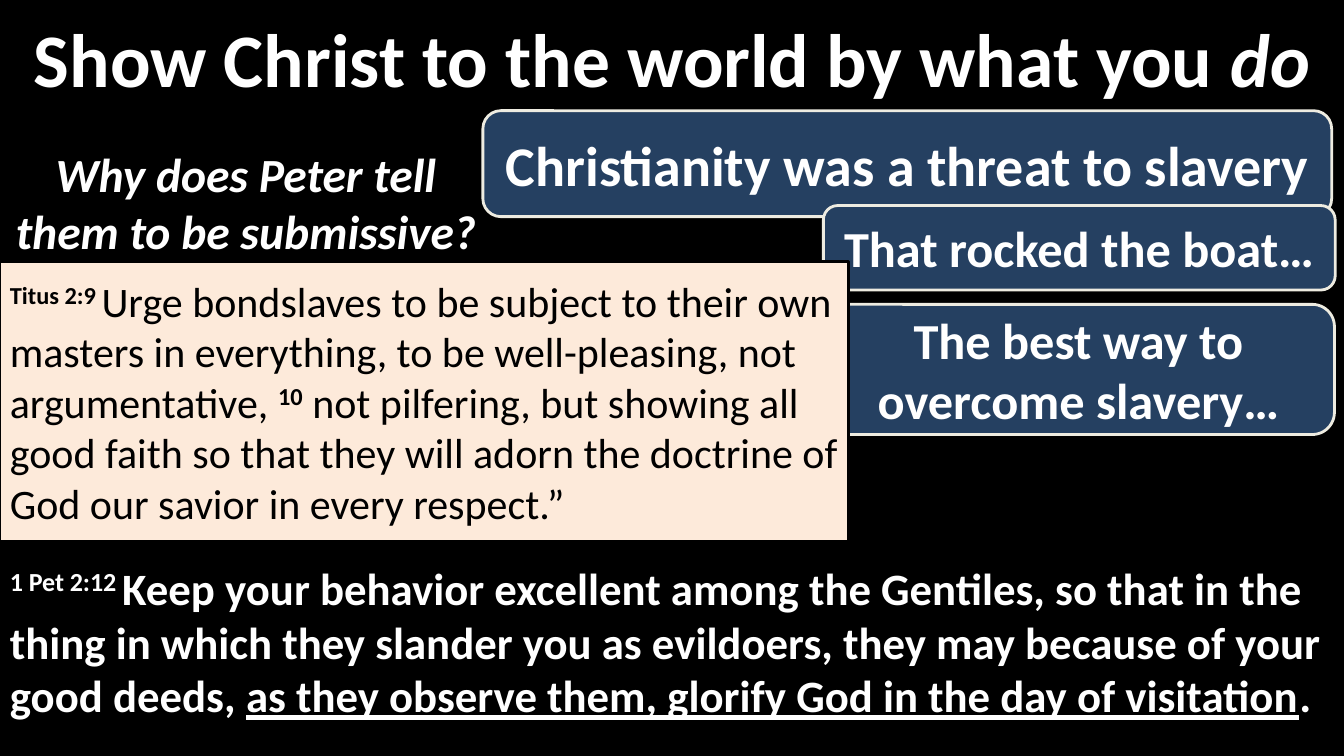
from dataclasses import dataclass

from pptx import Presentation
from pptx.dml.color import RGBColor
from pptx.enum.shapes import MSO_SHAPE
from pptx.enum.text import MSO_ANCHOR, PP_ALIGN
from pptx.util import Cm, Pt

RECT = MSO_SHAPE.RECTANGLE
CALLOUT = MSO_SHAPE.ROUNDED_RECTANGULAR_CALLOUT
TOP, MIDDLE = MSO_ANCHOR.TOP, MSO_ANCHOR.MIDDLE
LEFT, CENTER = PP_ALIGN.LEFT, PP_ALIGN.CENTER
TAIL = (-0.22, 0.5, 0.17)
WIDTH, HEIGHT = 33.87, 19.05


@dataclass(frozen=True)
class Theme:
    font: str = "Calibri"
    black: str = "000000"
    white: str = "FFFFFF"
    navy: str = "254061"
    cream: str = "EEECE1"
    peach: str = "FDEADA"
    title: int = 54
    large: int = 40
    medium: int = 36
    ask: int = 34
    verse: int = 32
    quote: int = 30
    line: int = 2


class Deck:
    def __init__(self, theme):
        self.theme = theme
        self.show = Presentation()
        self.show.slide_width = Cm(WIDTH)
        self.show.slide_height = Cm(HEIGHT)
        self.slide = self.show.slides.add_slide(self.show.slide_layouts[6])
        self.paint(self.slide.background.fill, theme.black)

    def paint(self, fill, color):
        if color:
            fill.solid()
            fill.fore_color.rgb = RGBColor.from_string(color)
        else:
            fill.background()

    def label(self, shape, parts, size, color, anchor, align):
        frame = shape.text_frame
        frame.word_wrap = True
        frame.vertical_anchor = anchor
        para = frame.paragraphs[0]
        para.alignment = align
        for text, marks in parts:
            run = para.add_run()
            run.text = text
            font = run.font
            font.name = self.theme.font
            font.size = Pt(size)
            font.color.rgb = RGBColor.from_string(color)
            font.bold = "b" in marks
            font.italic = "i" in marks
            font.underline = "u" in marks
            if "^" in marks:
                run._r.get_or_add_rPr().set("baseline", "30000")

    def title(self, box, parts):
        shape = self.slide.shapes.add_textbox(*map(Cm, box))
        self.label(shape, parts, self.theme.title, self.theme.white, MIDDLE, CENTER)

    def shape(self, kind, box, fill, line):
        shape = self.slide.shapes.add_shape(kind, *map(Cm, box))
        shape.shadow.inherit = False
        self.paint(shape.fill, fill)
        self.paint(shape.line.fill, line)
        if line:
            shape.line.width = Pt(self.theme.line)
        return shape

    def callout(self, box, text, size, marks="b", fill=None, line=None):
        shape = self.shape(CALLOUT, box, fill, line)
        for index, value in enumerate(TAIL):
            shape.adjustments[index] = value
        self.label(shape, [(text, marks)], size, self.theme.white, MIDDLE, CENTER)

    def point(self, box, text, size):
        self.callout(box, text, size, fill=self.theme.navy, line=self.theme.cream)

    def verse(self, box, parts, size, color, fill, line=None, anchor=TOP):
        shape = self.shape(RECT, box, fill, line)
        self.label(shape, parts, size, color, anchor, LEFT)


def main():
    theme = Theme()
    deck = Deck(theme)
    deck.title((0, 0.1, WIDTH, 2.67), [
        ("Show Christ to the world by what you ", "b"),
        ("do", "bi"),
    ])
    deck.point((12.17, 2.79, 21.39, 2.67),
               "Christianity was a threat to slavery", theme.large)
    deck.callout((0, 3.91, 12.4, 2.36),
                 "Why does Peter tell them to be submissive?", theme.ask, "bi")
    deck.point((20.75, 5.18, 12.9, 2.13), "That rocked the boat…", theme.medium)
    deck.verse((0, 14, WIDTH, 4.62), [
        ("1 Pet 2:12 ", "b^"),
        ("Keep your behavior excellent among the Gentiles, so that in the thing "
         "in which they slander you as evildoers, they may because of your "
         "good deeds, ", "b"),
        ("as they observe them, glorify God in the day of visitation", "bu"),
        (".", "b"),
    ], theme.verse, theme.white, theme.black)
    deck.point((20.73, 7.67, 12.9, 3.28),
               "The best way to overcome slavery…", theme.medium)
    deck.verse((0, 6.6, 21.39, 7.04), [
        ("Titus 2:9 ", "b^"),
        ("Urge bondslaves to be subject to their own masters in everything, "
         "to be well-pleasing, not argumentative, ", ""),
        ("10", "b^"),
        (" not pilfering, but showing all good faith so that they will adorn "
         "the doctrine of God our savior in every respect.”", ""),
    ], theme.quote, theme.black, theme.peach, theme.black, MIDDLE)
    deck.show.save("out.pptx")


if __name__ == "__main__":
    main()
